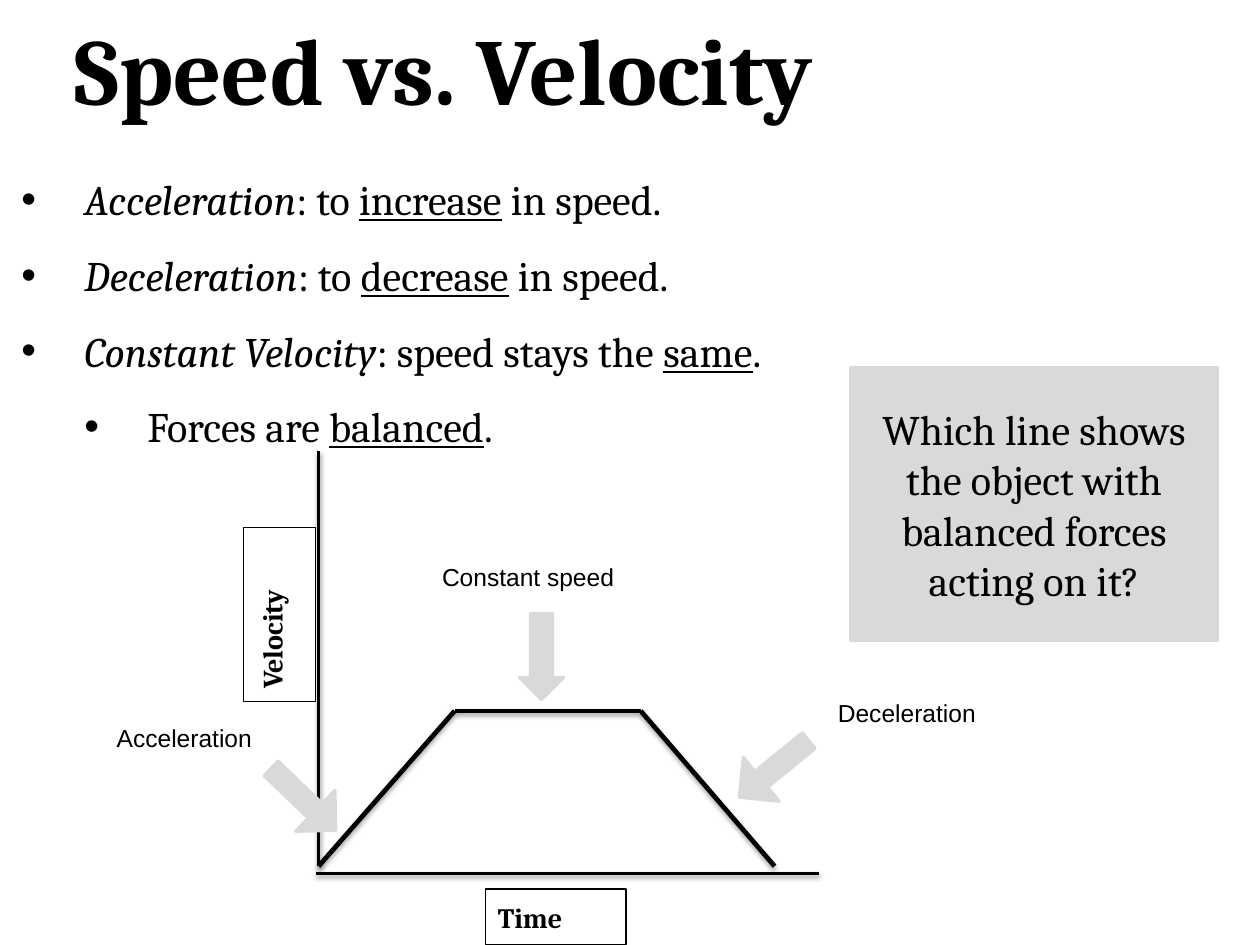
from dataclasses import dataclass

from lxml import etree
from pptx import Presentation
from pptx.dml.color import RGBColor
from pptx.enum.shapes import MSO_CONNECTOR, MSO_SHAPE
from pptx.enum.text import MSO_ANCHOR, MSO_AUTO_SIZE, PP_ALIGN
from pptx.oxml.ns import qn
from pptx.util import Pt

STRAIGHT = MSO_CONNECTOR.STRAIGHT
RECTANGLE = MSO_SHAPE.RECTANGLE
DOWN_ARROW, RIGHT_ARROW = MSO_SHAPE.DOWN_ARROW, MSO_SHAPE.RIGHT_ARROW
TOP, MIDDLE = MSO_ANCHOR.TOP, MSO_ANCHOR.MIDDLE
LEFT, CENTER = PP_ALIGN.LEFT, PP_ALIGN.CENTER
GROW = MSO_AUTO_SIZE.SHAPE_TO_FIT_TEXT


@dataclass(frozen=True)
class Theme:
    ink: RGBColor = RGBColor(0, 0, 0)
    paper: RGBColor = RGBColor(255, 255, 255)
    gray: RGBColor = RGBColor(0xD9, 0xD9, 0xD9)
    serif: str = "Cambria"
    sans: str = "Arial"
    title: float = 60
    body: float = 26.7
    axis: float = 17.8
    label: float = 15.6


class SlideBuilder:
    def __init__(self, slide, theme):
        self.slide = slide
        self.theme = theme

    def style(self, paragraph, size, name=None, bold=False, align=LEFT):
        paragraph.alignment = align
        font = paragraph.font
        font.name = name or self.theme.serif
        font.size = Pt(size)
        font.bold = bold
        font.color.rgb = self.theme.ink

    def place(self, shape, area):
        shape.left, shape.top, shape.width, shape.height = map(Pt, area)

    def title(self, text, area):
        title = self.slide.shapes.title
        self.place(title, area)
        title.text_frame.text = text
        title.text_frame.vertical_anchor = MIDDLE
        self.style(title.text_frame.paragraphs[0], self.theme.title, bold=True)

    def shape(self, kind, area, fill, line=None, width=2, rotation=0):
        shape = self.slide.shapes.add_shape(kind, *map(Pt, area))
        shape.shadow.inherit = False
        shape.rotation = rotation
        shape.fill.solid()
        shape.fill.fore_color.rgb = fill
        if line is None:
            shape.line.fill.background()
        else:
            shape.line.color.rgb = line
            shape.line.width = Pt(width)
        return shape

    def bullets(self, items, area, indent=40):
        """Each item is a level and its spans: (text, italic, underline)."""
        frame = self.shape(RECTANGLE, area, self.theme.paper).text_frame
        frame.word_wrap = True
        frame.vertical_anchor = MIDDLE
        for number, (level, spans) in enumerate(items):
            para = frame.add_paragraph() if number else frame.paragraphs[0]
            para.level = level
            para.line_spacing = 1.5
            self.style(para, self.theme.body)
            properties = para._p.get_or_add_pPr()
            properties.set("marL", str(Pt(indent * (level + 1))))
            properties.set("indent", str(-Pt(indent)))
            bullet_font = etree.Element(qn("a:buFont"), typeface=self.theme.sans)
            bullet = etree.Element(qn("a:buChar"), char="•")
            properties.find(qn("a:defRPr")).addprevious(bullet_font)
            bullet_font.addnext(bullet)
            for text, italic, underline in spans:
                span = para.add_run()
                span.text = text
                span.font.italic = italic
                span.font.underline = underline

    def axis_title(self, text, area, rotation=0):
        box = self.shape(RECTANGLE, area, self.theme.paper, self.theme.ink,
                         0.75, rotation)
        frame = box.text_frame
        frame.word_wrap = True
        frame.vertical_anchor = TOP
        frame.margin_left = frame.margin_right = Pt(8)
        frame.margin_top = frame.margin_bottom = Pt(4)
        frame.text = text
        para = frame.paragraphs[0]
        para.line_spacing = 1.15
        para.space_after = Pt(11.1)
        self.style(para, self.theme.axis, bold=True)

    def line(self, start, end, width, shadow_alpha, shadow_distance):
        line = self.slide.shapes.add_connector(STRAIGHT, *map(Pt, start + end))
        line.line.color.rgb = self.theme.ink
        line.line.width = Pt(width)
        effects = etree.SubElement(line._element.spPr, qn("a:effectLst"))
        shadow = etree.SubElement(
            effects, qn("a:outerShdw"), blurRad=str(Pt(3.1)),
            dist=str(Pt(shadow_distance)), dir="5400000", rotWithShape="0")
        color = etree.SubElement(shadow, qn("a:srgbClr"), val=str(self.theme.ink))
        etree.SubElement(color, qn("a:alpha"), val=str(shadow_alpha * 1000))

    def arrow(self, kind, area, rotation=0, shaft=0.5):
        arrow = self.shape(kind, area, self.theme.gray, self.theme.gray,
                           rotation=rotation)
        arrow.adjustments[0] = shaft

    def label(self, text, area):
        box = self.slide.shapes.add_textbox(*map(Pt, area))
        frame = box.text_frame
        frame.word_wrap = True
        frame.auto_size = GROW
        frame.text = text
        self.style(frame.paragraphs[0], self.theme.label, self.theme.sans)

    def question(self, text, area):
        box = self.shape(RECTANGLE, area, self.theme.gray, self.theme.gray)
        frame = box.text_frame
        frame.word_wrap = True
        frame.vertical_anchor = MIDDLE
        frame.text = text
        self.style(frame.paragraphs[0], self.theme.body, align=CENTER)


def definition(term, middle, answer, ending):
    return 0, [(term, True, False), (middle, False, False),
               (answer, False, True), (ending, False, False)]


def main():
    deck = Presentation()
    deck.slide_width, deck.slide_height = Pt(800), Pt(600)
    page = SlideBuilder(deck.slides.add_slide(deck.slide_layouts[5]), Theme())

    page.title("Speed vs. Velocity", (40, 0, 720, 86.4))
    page.bullets([
        definition("Acceleration", ": to ", "increase", " in speed."),
        definition("Deceleration", ": to ", "decrease", " in speed."),
        definition("Constant Velocity", ": speed stays the ", "same", "."),
        (1, [("Forces are ", False, False), ("balanced", False, True),
             (".", False, False)]),
    ], (6.5, 93.6, 546.5, 193.7))

    page.axis_title("Time", (308.2, 564.5, 89.3, 35.3))
    for start, end in [((202.3, 286.6), (202.3, 550)),
                       ((519.8, 554.4), (200.9, 554.4))]:
        page.line(start, end, 2, 38, 1.6)
    motion = [(202.3, 550), (288.7, 451.4), (406.8, 451.4), (491.8, 550)]
    for start, end in zip(motion, motion[1:]):
        page.line(start, end, 3, 35, 1.8)
    page.axis_title("Velocity", (122.4, 367.2, 110.2, 46.1), 270)

    page.arrow(DOWN_ARROW, (329.8, 389.5, 28.1, 54.7))
    for left, top, rotation in [(164.2, 489.6, 43.8), (463, 470.2, 140.8)]:
        page.arrow(RIGHT_ARROW, (left, top, 56.9, 36), rotation, 0.356)
    for text, left, top, width in [("Deceleration", 524.9, 439.9, 133.2),
                                   ("Constant speed", 273.6, 353.5, 162.7),
                                   ("Acceleration", 67, 455.8, 133.2)]:
        page.label(text, (left, top, width, 25.9))
    page.question("Which line shows the object with balanced forces acting on it?",
                  (540, 233.3, 233.3, 173.5))
    deck.save("out.pptx")


if __name__ == "__main__":
    main()
